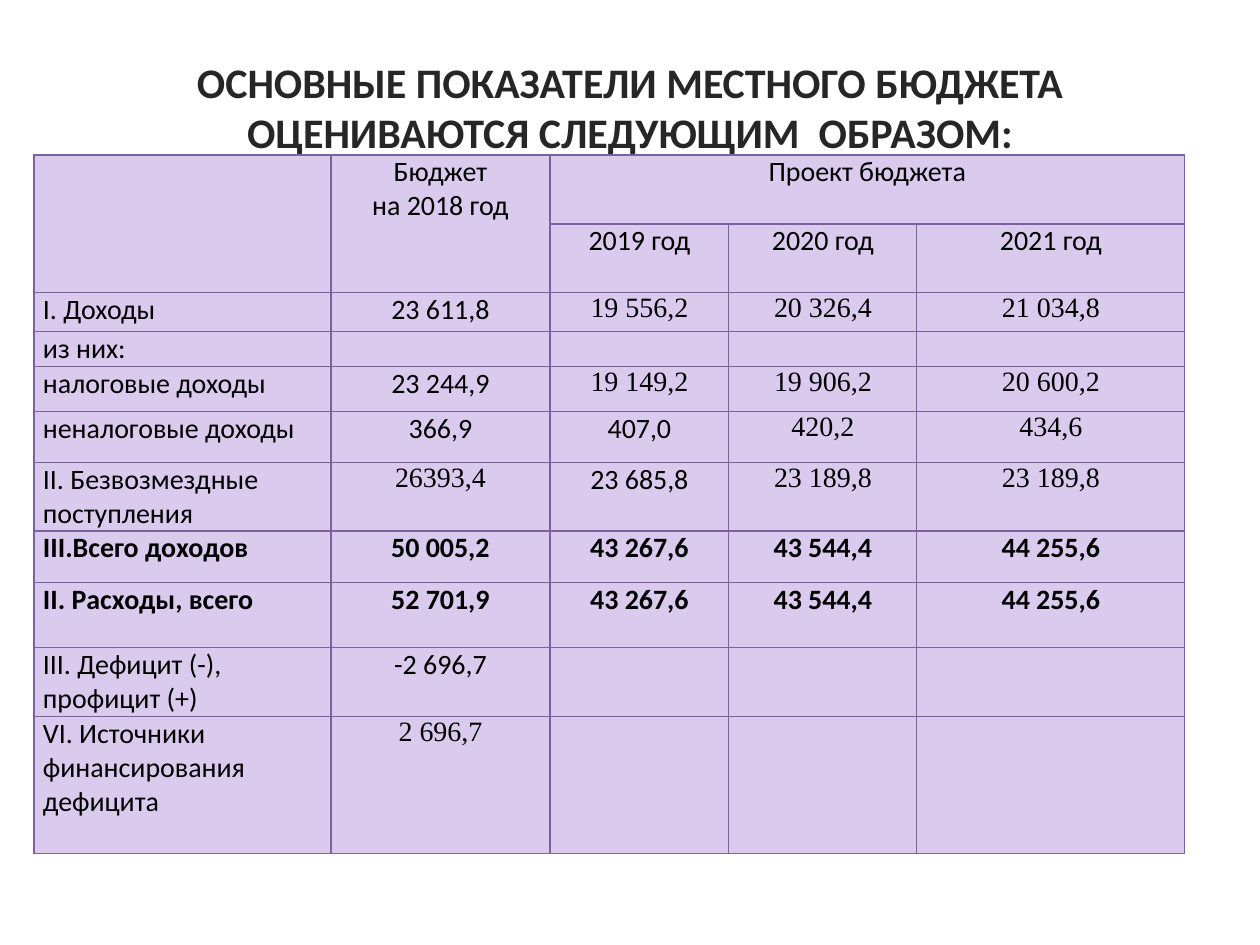
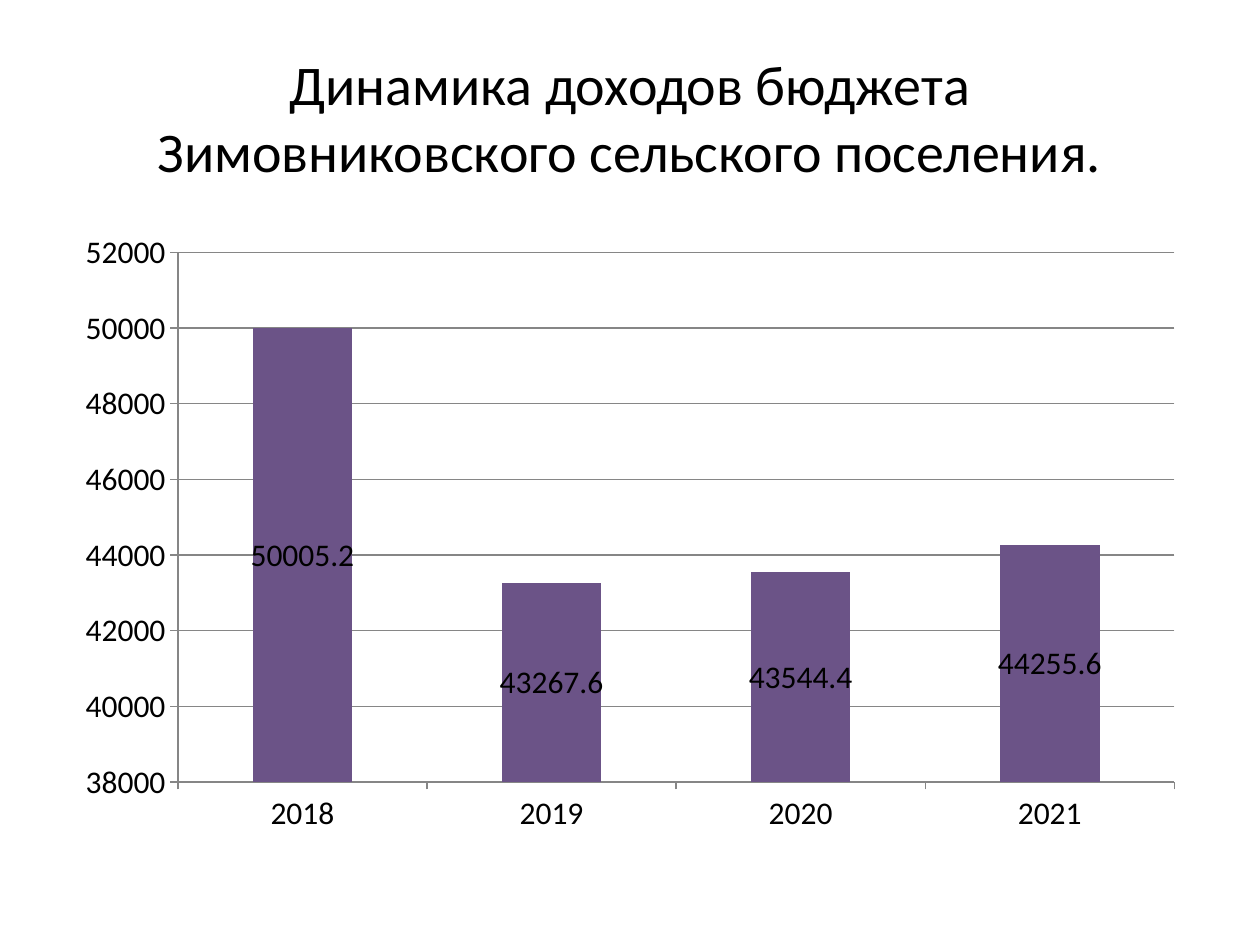
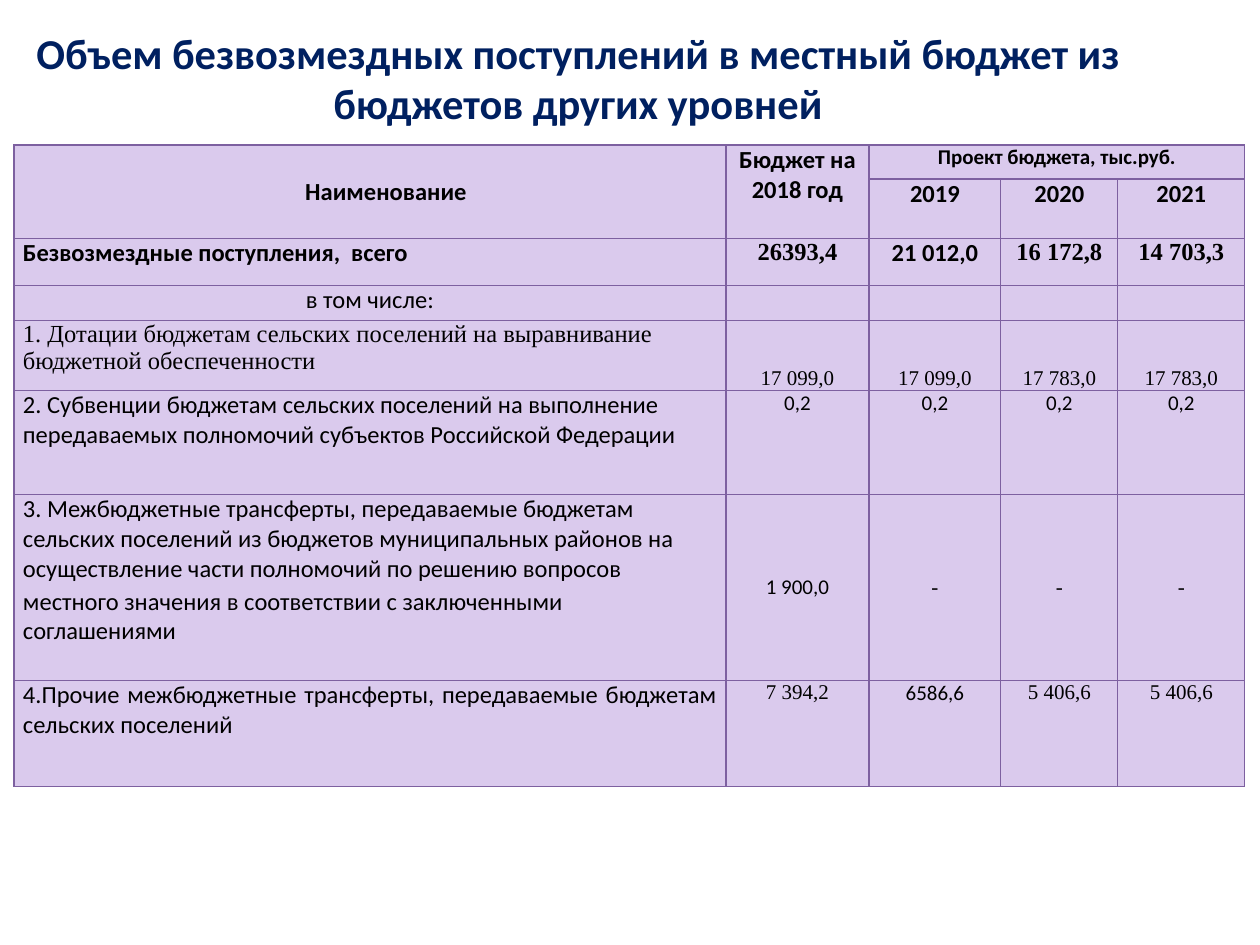
from itertools import product

from lxml.etree import SubElement
from pptx import Presentation
from pptx.chart.data import CategoryChartData
from pptx.dml.color import RGBColor
from pptx.enum.chart import XL_CHART_TYPE, XL_LABEL_POSITION, XL_TICK_MARK
from pptx.enum.text import MSO_ANCHOR, MSO_AUTO_SIZE, PP_ALIGN
from pptx.oxml import parse_xml
from pptx.oxml.ns import nsdecls, qn
from pptx.util import Pt

EMU_PER_PX = 914400 / 126
TITLE_ONLY = 5

BLACK = RGBColor(0x00, 0x00, 0x00)
CHARCOAL = RGBColor(0x26, 0x26, 0x26)
NAVY = RGBColor(0x00, 0x20, 0x60)
LILAC = RGBColor(0xDA, 0xCA, 0xED)
VIOLET = RGBColor(0x7D, 0x60, 0xA0)
PLUM = RGBColor(0x6B, 0x53, 0x87)
RED = RGBColor(0xC0, 0x50, 0x4D)
GREEN = RGBColor(0x9B, 0xBB, 0x59)
GREY = RGBColor(0x86, 0x86, 0x86)

SANS = {"name": "Calibri"}
SERIF = {"name": "Times New Roman"}
BOLD = {"bold": True}
CENTER = {"alignment": PP_ALIGN.CENTER}
MIDDLE = {"vertical_anchor": MSO_ANCHOR.MIDDLE}
BOTTOM = {"vertical_anchor": MSO_ANCHOR.BOTTOM}


def px(n):
    return round(n * EMU_PER_PX)


def set_attrs(obj, values):
    for name, value in values.items():
        setattr(obj, name, value)


def set_box(sp, left, top, width, height):
    set_attrs(sp, {"left": px(left), "top": px(top),
                   "width": px(width), "height": px(height)})


def format_font(font, color=BLACK, **values):
    set_attrs(font, SANS | values)
    font.color.rgb = color


def add_titled_slide(prs, text, box, color, **font):
    slide = prs.slides.add_slide(prs.slide_layouts[TITLE_ONLY])
    title = slide.shapes.title
    set_box(title, *box)
    tf = title.text_frame
    tf.text = text
    set_attrs(tf, {"word_wrap": True, "auto_size": MSO_AUTO_SIZE.NONE} | MIDDLE)
    p = tf.paragraphs[0]
    set_attrs(p, CENTER)
    format_font(p.runs[0].font, color, **font)
    return slide


def set_borders(cell):
    tc_pr = cell._tc.get_or_add_tcPr()
    for side in ("lnB", "lnT", "lnR", "lnL"):
        tc_pr.insert(0, parse_xml(
            f'<a:{side} {nsdecls("a")} w="{Pt(0.75)}"><a:solidFill>'
            f'<a:srgbClr val="{VIOLET}"/></a:solidFill></a:{side}>'))


def fill_cell(cell, text, font, para, frame):
    cell.fill.solid()
    cell.fill.fore_color.rgb = LILAC
    set_borders(cell)
    set_attrs(cell, {"margin_left": px(9), "margin_right": px(9),
                     "margin_top": 0, "margin_bottom": 0} | frame)
    tf = cell.text_frame
    tf.text = text
    for p in tf.paragraphs:
        set_attrs(p, para)
        for r in p.runs:
            format_font(r.font, **font)
        if not p.runs:
            SubElement(p._p, qn("a:endParaRPr"), sz="1200")


def add_budget_table(slide, xs, ys, rows, size, formats):
    """Draw rows between grid lines xs and ys; formats maps (row, column) to changes.

    The two heading rows share one shape: two tall cells, then one wide cell.
    """
    n_rows, n_cols = len(ys) - 1, len(xs) - 1
    frame = slide.shapes.add_table(n_rows, n_cols, px(xs[0]), px(ys[0]),
                                   px(xs[-1] - xs[0]), px(ys[-1] - ys[0]))
    table = frame.table
    set_attrs(table, {"first_row": False, "horz_banding": False})
    for column, start, end in zip(table.columns, xs, xs[1:]):
        column.width = px(end - start)
    for row, start, end in zip(table.rows, ys, ys[1:]):
        row.height = px(end - start)
    for i, j in product(range(n_rows), range(n_cols)):
        change = formats.get((i, j), {})
        font = {"size": Pt(size)} | change.get("font", {})
        para = (CENTER if j or i < 2 else {}) | change.get("para", {})
        fill_cell(table.cell(i, j), rows[i][j], font, para, change.get("frame", {}))
    for first, last in (((0, 0), (1, 0)), ((0, 1), (1, 1)), ((0, 2), (0, n_cols - 1))):
        table.cell(*first).merge(table.cell(*last))


def add_income_chart(slide, box, years, series):
    data = CategoryChartData()
    data.categories = years
    for name, values, _ in series:
        data.add_series(name, values)
    chart = slide.shapes.add_chart(XL_CHART_TYPE.COLUMN_STACKED,
                                   *map(px, box), data).chart
    set_attrs(chart, {"has_legend": False, "has_title": False})
    format_font(chart.font, size=Pt(18))
    plot = chart.plots[0]
    set_attrs(plot, {"gap_width": 150, "overlap": 100, "vary_by_categories": False})
    for s, (_, _, color) in zip(plot.series, series):
        s.format.fill.solid()
        s.format.fill.fore_color.rgb = color
    set_attrs(plot.series[0].data_labels,
              {"show_value": True, "position": XL_LABEL_POSITION.CENTER})

    value_axis = chart.value_axis
    set_attrs(value_axis, {"minimum_scale": 38000, "maximum_scale": 52000,
                           "major_unit": 2000, "has_major_gridlines": True})
    for axis in (value_axis, chart.category_axis):
        axis.major_tick_mark = XL_TICK_MARK.OUTSIDE
        axis.format.line.color.rgb = GREY
    value_axis.major_gridlines.format.line.color.rgb = GREY


def add_indicators_slide(prs):
    slide = add_titled_slide(
        prs, "ОСНОВНЫЕ ПОКАЗАТЕЛИ МЕСТНОГО БЮДЖЕТА ОЦЕНИВАЮТСЯ СЛЕДУЮЩИМ  ОБРАЗОМ:",
        (63, 17, 1134, 179), CHARCOAL, size=Pt(24), bold=True)
    rows = [
        ("", "Бюджет\nна 2018 год", "Проект бюджета", "", ""),
        ("", "", "2019 год", "2020 год", "2021 год"),
        ("I. Доходы", "23 611,8", "19 556,2", "20 326,4", "21 034,8"),
        ("из них:", "", "", "", ""),
        ("налоговые доходы", "23 244,9", "19 149,2", "19 906,2", "20 600,2"),
        ("неналоговые доходы", "366,9", "407,0", "420,2", "434,6"),
        ("II. Безвозмездные поступления", "26393,4", "23 685,8", "23 189,8", "23 189,8"),
        ("III.Всего доходов", "50 005,2", "43 267,6", "43 544,4", "44 255,6"),
        ("II. Расходы, всего", "52 701,9", "43 267,6", "43 544,4", "44 255,6"),
        ("III. Дефицит (-), профицит (+)", "-2 696,7", "", "", ""),
        ("VI. Источники финансирования дефицита", "2 696,7", "", "", ""),
    ]
    serif_cells = [(2, 2), (2, 3), (2, 4), (4, 2), (4, 3), (4, 4), (5, 3), (5, 4),
                   (6, 1), (6, 3), (6, 4), (10, 1)]
    formats = {at: {"font": SERIF} for at in serif_cells}
    formats |= {at: {"font": BOLD} for at in product((7, 8), range(5))}
    add_budget_table(slide, (34, 331, 550, 729, 917, 1185),
                     (155, 224, 292, 331, 366, 411, 462, 530, 582, 647, 715, 852),
                     rows, 16, formats)


def add_dynamics_slide(prs):
    slide = add_titled_slide(
        prs, "Динамика доходов бюджета Зимовниковского сельского поселения.",
        (63, 38, 1134, 157), BLACK, size=Pt(32))
    no_income = (0, 0, 0, 0)
    add_income_chart(slide, (63, 221, 1134, 624), ("2018", "2019", "2020", "2021"), [
        ("Series 1", (50005.2, 43267.6, 43544.4, 44255.6), PLUM),
        ("Series 2", no_income, RED),
        ("Series 3", no_income, GREEN),
    ])


def add_transfers_slide(prs):
    slide = add_titled_slide(
        prs, "Объем безвозмездных поступлений в местный бюджет из бюджетов других уровней",
        (11, 14, 1134, 127), NAVY, size=Pt(24.3), bold=True)
    rows = [
        ("Наименование", "Бюджет на 2018 год", "Проект бюджета, тыс.руб.", "", ""),
        ("", "", "2019", "2020", "2021"),
        ("Безвозмездные поступления,  всего",
         "26393,4", "21 012,0", "16 172,8", "14 703,3"),
        ("в том числе:", "", "", "", ""),
        ("1. Дотации бюджетам сельских поселений на выравнивание бюджетной "
         "обеспеченности", "17 099,0", "17 099,0", "17 783,0", "17 783,0"),
        ("2. Субвенции бюджетам сельских поселений на выполнение передаваемых "
         "полномочий субъектов Российской Федерации", "0,2", "0,2", "0,2", "0,2"),
        ("3. Межбюджетные трансферты, передаваемые бюджетам сельских поселений из "
         "бюджетов муниципальных районов на осуществление части полномочий по "
         "решению вопросов\nместного значения в соответствии с заключенными "
         "соглашениями", "1 900,0", "-", "-", "-"),
        ("4.Прочие межбюджетные трансферты, передаваемые бюджетам сельских "
         "поселений", "7 394,2", "6586,6", "5 406,6", "5 406,6"),
    ]
    small = {"size": Pt(12)}
    formats = {at: {"font": BOLD} for at in product(range(3), range(5))}
    formats |= {(2, j): {"font": BOLD | SERIF} for j in (1, 3, 4)}
    for j in range(1, 5):
        formats |= {
            (4, j): {"font": small | SERIF, "frame": BOTTOM},
            (5, j): {"font": small},
            (6, j): {"font": small | (SANS if j == 1 else SERIF), "frame": MIDDLE},
            (7, j): {"font": small | (SANS if j == 2 else SERIF)},
        }
    formats |= {
        (0, 0): {"font": BOLD, "frame": MIDDLE | {"margin_left": px(41)}},
        (0, 2): {"font": BOLD | small},
        (3, 0): {"para": CENTER},
        (4, 0): {"font": SERIF},
        (6, 0): {"para": {"space_before": Pt(1.6)}},
        (7, 0): {"para": {"alignment": PP_ALIGN.JUSTIFY}},
    }
    add_budget_table(slide, (14, 726, 869, 1001, 1118, 1245),
                     (145, 179, 238, 285, 320, 390, 494, 680, 786),
                     rows, 14, formats)


def main():
    prs = Presentation()
    set_attrs(prs, {"slide_width": px(1260), "slide_height": px(945)})
    add_indicators_slide(prs)
    add_dynamics_slide(prs)
    add_transfers_slide(prs)
    prs.save("out.pptx")


if __name__ == "__main__":
    main()
